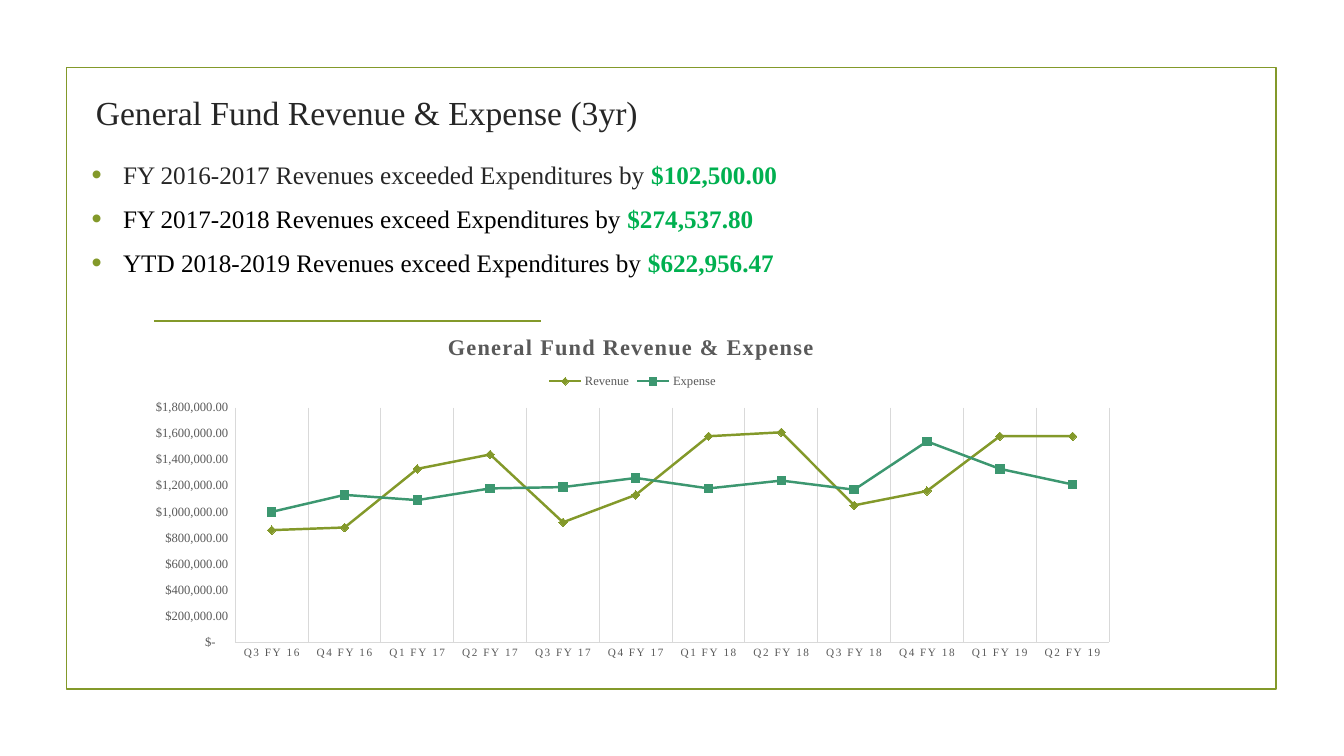
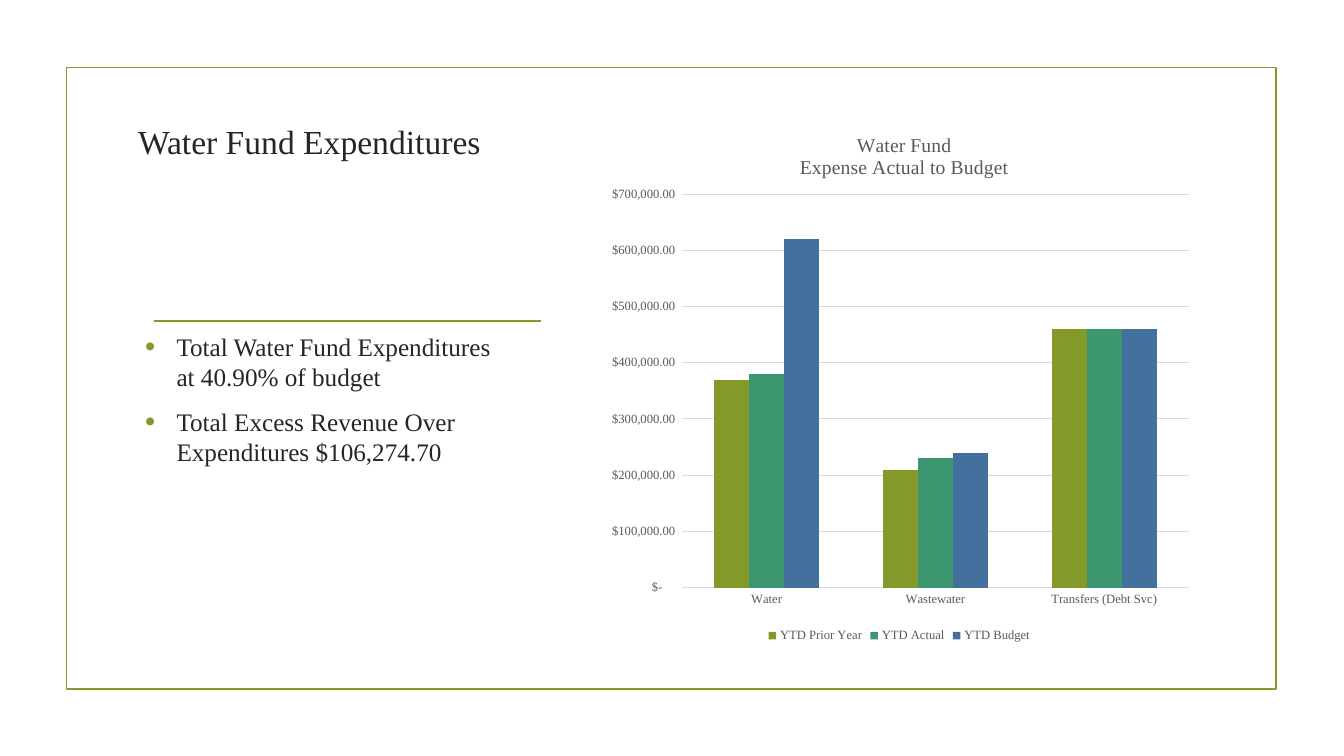
from pptx import Presentation
from pptx.chart import data as chart_data
from pptx.dml.color import RGBColor
from pptx.enum import chart as kinds, shapes, text
from pptx.oxml import parse_xml
from pptx.oxml import ns
from pptx.util import Pt

FONT = "Times New Roman"
OLIVE, TEAL, BLUE, GREEN = "83992A", "3C9770", "44709D", "00B050"
INK, BLACK, GREY, PALE = "262626", "000000", "595959", "D9D9D9"
MONEY = '_("$"* #,##0.00_);_("$"* \\(#,##0.00\\);_("$"* "-"??_);_(@_)'


def rgb(code):
    return RGBColor.from_string(code)


def style(target, **values):
    for name, value in values.items():
        setattr(target, name, value)


def style_font(font, size, color, bold=False):
    style(font, name=FONT, size=Pt(size), bold=bold)
    font.color.rgb = rgb(color)


def style_line(line, color, width):
    line.color.rgb = rgb(color)
    line.width = Pt(width)


def c_element(tag, inner=""):
    return parse_xml(f"<c:{tag} {ns.nsdecls('c')}>{inner}</c:{tag}>")


# Page parts shared by all slides
def add_page(deck):
    page = deck.slides.add_slide(deck.slide_layouts[6])
    frame = page.shapes.add_shape(
        shapes.MSO_SHAPE.RECTANGLE, Pt(47.5), Pt(48.2), Pt(864), Pt(444.2))
    frame.shadow.inherit = False
    frame.fill.background()
    style_line(frame.line, OLIVE, 1.25)
    rule = page.shapes.add_connector(
        shapes.MSO_CONNECTOR.STRAIGHT, Pt(110.2), Pt(229.5), Pt(386.6), Pt(229.5))
    style_line(rule.line, OLIVE, 1.25)
    rule.element.spPr.append(parse_xml(f"<a:effectLst {ns.nsdecls('a')}/>"))
    return page


def add_text_box(page, box, anchor):
    frame = page.shapes.add_textbox(*map(Pt, box)).text_frame
    style(frame, word_wrap=True, vertical_anchor=anchor)
    return frame


def add_title(page, box, title):
    para = add_text_box(page, box, text.MSO_ANCHOR.BOTTOM).paragraphs[0]
    para.alignment = text.PP_ALIGN.CENTER
    span = para.add_run()
    span.text = title
    style_font(span.font, 24, INK)


def add_bullets(page, box, items):
    """Each item is a list of (wording, colour, bold) spans."""
    frame = add_text_box(page, box, text.MSO_ANCHOR.TOP)
    for index, spans in enumerate(items):
        para = frame.add_paragraph() if index else frame.paragraphs[0]
        style(para, space_before=Pt(4 if index else 0), space_after=Pt(6))
        props = para._p.get_or_add_pPr()
        props.set("marL", str(Pt(22.5)))
        props.set("indent", str(-Pt(22.5)))
        for mark in (f'<a:buClr {{}}><a:srgbClr val="{OLIVE}"/></a:buClr>',
                     '<a:buSzPct {} val="115000"/>',
                     '<a:buFont {} typeface="Arial"/>',
                     '<a:buChar {} char="•"/>'):
            props.append(parse_xml(mark.format(ns.nsdecls("a"))))
        for wording, color, bold in spans:
            span = para.add_run()
            span.text = wording
            style_font(span.font, 18, color, bold)


# Chart parts
def set_layout(parent, position, place, inner=False):
    for old in parent.findall(ns.qn("c:layout")):
        parent.remove(old)
    target = '<c:layoutTarget val="inner"/>' if inner else ""
    modes = '<c:xMode val="edge"/><c:yMode val="edge"/>'
    sides = "".join(f'<c:{side} val="{value}"/>' for side, value in zip("xywh", place))
    parent.insert(position, c_element(
        "layout", f"<c:manualLayout>{target}{modes}{sides}</c:manualLayout>"))


def style_axis(axis, size, grid, line):
    style(axis, major_tick_mark=kinds.XL_TICK_MARK.NONE,
          minor_tick_mark=kinds.XL_TICK_MARK.NONE, has_major_gridlines=grid)
    style_font(axis.tick_labels.font, size, GREY)
    if grid:
        style_line(axis.major_gridlines.format.line, PALE, 0.75)
    if line:
        style_line(axis.format.line, PALE, 0.75)
    else:
        axis.format.line.fill.background()


def add_money_chart(page, box, kind, categories, series, scale, plot_place, legend_side):
    source = chart_data.CategoryChartData(number_format=MONEY)
    source.categories = categories
    for name, values, _ in series:
        source.add_series(name, values)
    chart = page.shapes.add_chart(kind, *map(Pt, box), source).chart
    style_font(chart.font, 10, BLACK)
    chart.has_legend = True
    style(chart.legend, position=legend_side, include_in_layout=False)
    style_font(chart.legend.font, 9, GREY)
    chart.plots[0].vary_by_categories = False
    top, step = scale
    style(chart.value_axis, minimum_scale=0, maximum_scale=top, major_unit=step)
    style(chart.value_axis.tick_labels, number_format=MONEY, number_format_is_linked=False)
    set_layout(chart.element.xpath("c:chart/c:plotArea")[0], 0, plot_place, inner=True)
    return chart


def add_chart_title(chart, lines, size, place, bold=False, spacing=0):
    chart.has_title = True
    frame = chart.chart_title.text_frame
    for index, line in enumerate(lines):
        para = frame.add_paragraph() if index else frame.paragraphs[0]
        para.alignment = text.PP_ALIGN.CENTER
        span = para.add_run()
        span.text = line
        style_font(span.font, size, GREY, bold)
        span.font._element.set("spc", str(spacing))
    set_layout(chart.element.xpath("c:chart/c:title")[0], 1, place)


def add_line_chart(page, box, title, categories, series):
    chart = add_money_chart(
        page, box, kinds.XL_CHART_TYPE.LINE_MARKERS, categories, series,
        (1800000, 200000), (0.1, 0.27, 0.88, 0.66), kinds.XL_LEGEND_POSITION.TOP)
    add_chart_title(chart, [title], 16, (0.31, 0.05), bold=True, spacing=100)
    style_axis(chart.category_axis, 8, grid=True, line=True)
    style_axis(chart.value_axis, 9, grid=False, line=True)
    chart.category_axis.tick_labels.font._element.set("spc", "100")
    markers = (kinds.XL_MARKER_STYLE.DIAMOND, kinds.XL_MARKER_STYLE.SQUARE)
    for curve, (_, _, color), marker in zip(chart.plots[0].series, series, markers):
        curve.smooth = False
        style_line(curve.format.line, color, 1.75)
        style(curve.marker, style=marker, size=6)
        curve.marker.format.fill.solid()
        curve.marker.format.fill.fore_color.rgb = rgb(color)
        style_line(curve.marker.format.line, color, 0.75)


def add_column_chart(page, box, title_lines, categories, series):
    chart = add_money_chart(
        page, box, kinds.XL_CHART_TYPE.COLUMN_CLUSTERED, categories, series,
        (700000, 100000), (0.14, 0.16, 0.84, 0.73), kinds.XL_LEGEND_POSITION.BOTTOM)
    add_chart_title(chart, title_lines, 14, (0.33, 0.04))
    style_axis(chart.category_axis, 9, grid=False, line=True)
    style_axis(chart.value_axis, 9, grid=True, line=False)
    style(chart.plots[0], gap_width=182, overlap=0)
    for column, (_, _, color) in zip(chart.plots[0].series, series):
        column.format.fill.solid()
        column.format.fill.fore_color.rgb = rgb(color)


# Slides
def build_general_fund(deck):
    page = add_page(deck)
    add_title(page, (36.7, 18.7, 450.7, 79.2), "General Fund Revenue & Expense (3yr)")
    results = [
        ("FY 2016-2017 Revenues exceeded Expenditures by ", INK, "$102,500.00"),
        ("FY 2017-2018 Revenues exceed Expenditures by ", BLACK, "$274,537.80"),
        ("YTD 2018-2019 Revenues exceed Expenditures by ", BLACK, "$622,956.47"),
    ]
    add_bullets(page, (58.3, 110.2, 733.7, 112.3),
                [[(wording, color, False), (amount, GREEN, True)]
                 for wording, color, amount in results])
    quarters = [f"Q{index % 4 + 1} FY {16 + index // 4}" for index in range(2, 14)]
    add_line_chart(page, (97.2, 222.5, 709.2, 254.2), "General Fund Revenue & Expense", quarters, [
        ("Revenue", (860000, 880000, 1330000, 1440000, 920000, 1130000,
                     1580000, 1610000, 1050000, 1160000, 1580000, 1580000), OLIVE),
        ("Expense", (1000000, 1130000, 1090000, 1180000, 1190000, 1260000,
                     1180000, 1240000, 1170000, 1540000, 1330000, 1210000), TEAL),
    ])


def build_water_fund(deck):
    page = add_page(deck)
    add_title(page, (66.2, 36, 309.6, 82.8), "Water Fund Expenditures")
    add_bullets(page, (96.5, 233.3, 267.8, 187.2), [
        [("Total Water Fund Expenditures at 40.90% of budget", INK, False)],
        [("Total Excess Revenue Over Expenditures $106,274.70", INK, False)],
    ])
    add_column_chart(
        page, (427, 77, 430.6, 385.2), ["Water Fund", "Expense Actual to Budget"],
        ["Water", "Wastewater", "Transfers (Debt Svc)"], [
            ("YTD Prior Year", (370000, 210000, 460000), OLIVE),
            ("YTD Actual", (380000, 230000, 460000), TEAL),
            ("YTD Budget", (620000, 240000, 460000), BLUE),
        ])


def main():
    deck = Presentation()
    style(deck, slide_width=Pt(960), slide_height=Pt(540))
    build_general_fund(deck)
    build_water_fund(deck)
    deck.save("out.pptx")


if __name__ == "__main__":
    main()
